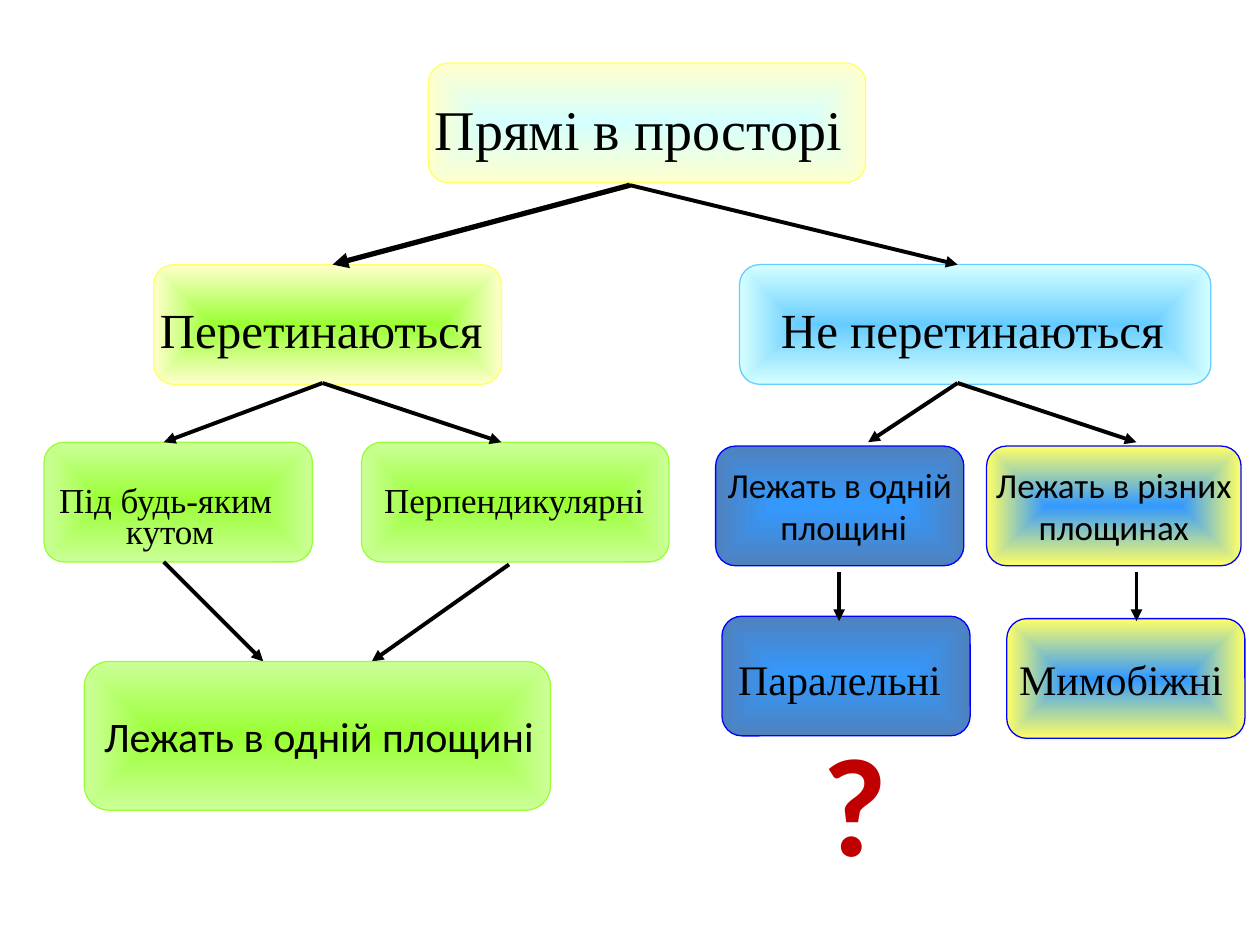
from lxml import etree
from pptx import Presentation
from pptx.dml.color import RGBColor
from pptx.enum.shapes import MSO_CONNECTOR, MSO_SHAPE
from pptx.enum.text import MSO_ANCHOR as Anchor, MSO_AUTO_SIZE as AutoSize, PP_ALIGN as Align
from pptx.oxml.ns import qn
from pptx.util import Inches, Pt

COLORS = {
    "black": "000000", "red": "C00000", "yellow": "FFFF66", "cream": "FFFFCC",
    "ice": "D5FFFF", "sky": "66CCFF", "lime": "99FF33", "mint": "CCFF99",
    "azure": "3399FF", "steel": "4F81BD", "blue": "0000FF",
}
SERIF, SANS = "Times New Roman", "Calibri"

# Box styles: centre colour, edge colour, outline colour
ROOT = ("ice", "cream", "yellow")
CROSSING = ("lime", "cream", "yellow")
APART = ("sky", "ice", "sky")
GREEN = ("lime", "mint", "lime")
PARALLEL = ("azure", "steel", "blue")
SKEW = ("azure", "yellow", "blue")


def rgb(name):
    return RGBColor.from_string(COLORS[name])


class Diagram:
    def __init__(self, page):
        self.page = page

    def set_text(self, shape, text, size, font=SERIF, color="black", align=Align.LEFT,
                 wrap=False, bold=False, anchor=Anchor.TOP):
        frame = shape.text_frame
        frame.text = text
        frame.word_wrap = wrap
        frame.vertical_anchor = anchor
        for para in frame.paragraphs:
            para.alignment = align
            for span in para.runs:
                span.font.name = font
                span.font.size = Pt(size)
                span.font.bold = bold
                span.font.color.rgb = rgb(color)

    def box(self, left, top, width, height, style):
        inner, outer, outline = style
        box = self.page.shapes.add_shape(
            MSO_SHAPE.ROUNDED_RECTANGLE,
            Inches(left), Inches(top), Inches(width), Inches(height))
        box.shadow.inherit = False
        box.line.color.rgb = rgb(outline)
        box.line.width = Pt(0.75)
        box.fill.gradient()
        for stop, name in zip(box.fill.gradient_stops, (inner, outer)):
            stop.color.rgb = rgb(name)
        # Turn the linear gradient into one that spreads from the centre
        gradient = box.element.spPr.find(qn("a:gradFill"))
        gradient.remove(gradient.find(qn("a:lin")))
        spread = etree.SubElement(gradient, qn("a:path"), {"path": "shape"})
        etree.SubElement(spread, qn("a:fillToRect"),
                         {side: "50000" for side in "ltrb"})
        return box

    def label(self, left, top, width, height, text, size, **style):
        label = self.page.shapes.add_textbox(
            Inches(left), Inches(top), Inches(width), Inches(height))
        self.set_text(label, text, size, **style)
        label.text_frame.auto_size = AutoSize.SHAPE_TO_FIT_TEXT
        return label

    def title(self, left, top, width, height, text, size):
        title = self.page.shapes.title
        title.left, title.top = Inches(left), Inches(top)
        title.width, title.height = Inches(width), Inches(height)
        self.set_text(title, text, size)
        title.text_frame.auto_size = AutoSize.SHAPE_TO_FIT_TEXT
        return title

    def arrow(self, start, end, width=2.25):
        arrow = self.page.shapes.add_connector(
            MSO_CONNECTOR.STRAIGHT, *(Inches(value) for value in start + end))
        arrow.line.color.rgb = rgb("black")
        arrow.line.width = Pt(width)
        properties = arrow.element.spPr
        etree.SubElement(properties.find(qn("a:ln")), qn("a:tailEnd"), {"type": "triangle"})
        etree.SubElement(properties, qn("a:effectLst"))


def main():
    deck = Presentation()
    deck.slide_width, deck.slide_height = Inches(10), Inches(7.5)
    diagram = Diagram(deck.slides.add_slide(deck.slide_layouts[5]))
    row = 0.95  # common box height

    # Heading, lifted in front of its box
    root = diagram.box(3.4, 0.5, 3.47, row, ROOT)
    title = diagram.title(3.35, 0.7, 3.47, 0.64, "Прямі в просторі", 32)
    root.element.addnext(title.element)

    # Boxes with separate labels
    diagram.box(1.22, 2.1, 2.76, row, CROSSING)
    diagram.label(1.17, 2.33, 2.89, 0.57, "Перетинаються", 28)
    diagram.box(0.35, 3.51, 2.13, row, GREEN)
    angle = diagram.label(0.31, 3.75, 2.01, 0.67, "Під будь-яким\n кутом", 20,
                          align=Align.CENTER)
    angle.text_frame.paragraphs[1].line_spacing = 0.7
    diagram.box(2.87, 3.51, 2.44, row, GREEN)
    diagram.label(2.95, 3.75, 2.5, 0.43, "Перпендикулярні", 20)
    diagram.box(5.87, 2.1, 3.74, row, APART)
    diagram.label(6.1, 2.33, 3.27, 0.57, "Не перетинаються", 28)
    diagram.box(5.73, 4.89, 1.97, row, PARALLEL)
    diagram.box(7.99, 4.91, 1.89, row, SKEW)
    diagram.label(5.76, 5.14, 2.13, 0.5, "Паралельні", 24, wrap=True)
    diagram.label(7.99, 5.14, 1.92, 0.5, "Мимобіжні", 24)

    # Arrows that branch from the heading and the second row
    diagram.arrow((5, 1.47), (2.64, 2.1), width=3)
    diagram.arrow((5, 1.47), (7.6, 2.1))
    for start, ends in ((2.56, (1.3, 3.98)), (7.6, (6.89, 9.02))):
        for end in ends:
            diagram.arrow((start, 3.04), (end, 3.51))

    # Arrows that meet at the shared green box
    diagram.arrow((1.3, 4.46), (2.09, 5.25))
    diagram.arrow((4.04, 4.48), (2.95, 5.25))

    # Boxes that hold their own text
    for left, top, width, height, style, text, size, align in (
        (0.67, 5.25, 3.7, 1.18, GREEN, "Лежать в одній площині", 24, Align.LEFT),
        (5.68, 3.54, 1.97, row, PARALLEL, "Лежать в одній\n площині", 20, Align.CENTER),
        (7.83, 3.54, 2.02, row, SKEW, "Лежать в різних\nплощинах", 20, Align.CENTER),
    ):
        box = diagram.box(left, top, width, height, style)
        diagram.set_text(box, text, size, font=SANS, align=align, anchor=Anchor.MIDDLE)

    # Arrows down to the last row
    for x in (6.66, 9.02):
        diagram.arrow((x, 4.54), (x, 4.93))

    # Question mark
    diagram.label(6.43, 5.64, 1.02, 1.45, "?", 80, font=SANS, color="red",
                  wrap=True, bold=True)

    deck.save("out.pptx")


if __name__ == "__main__":
    main()
